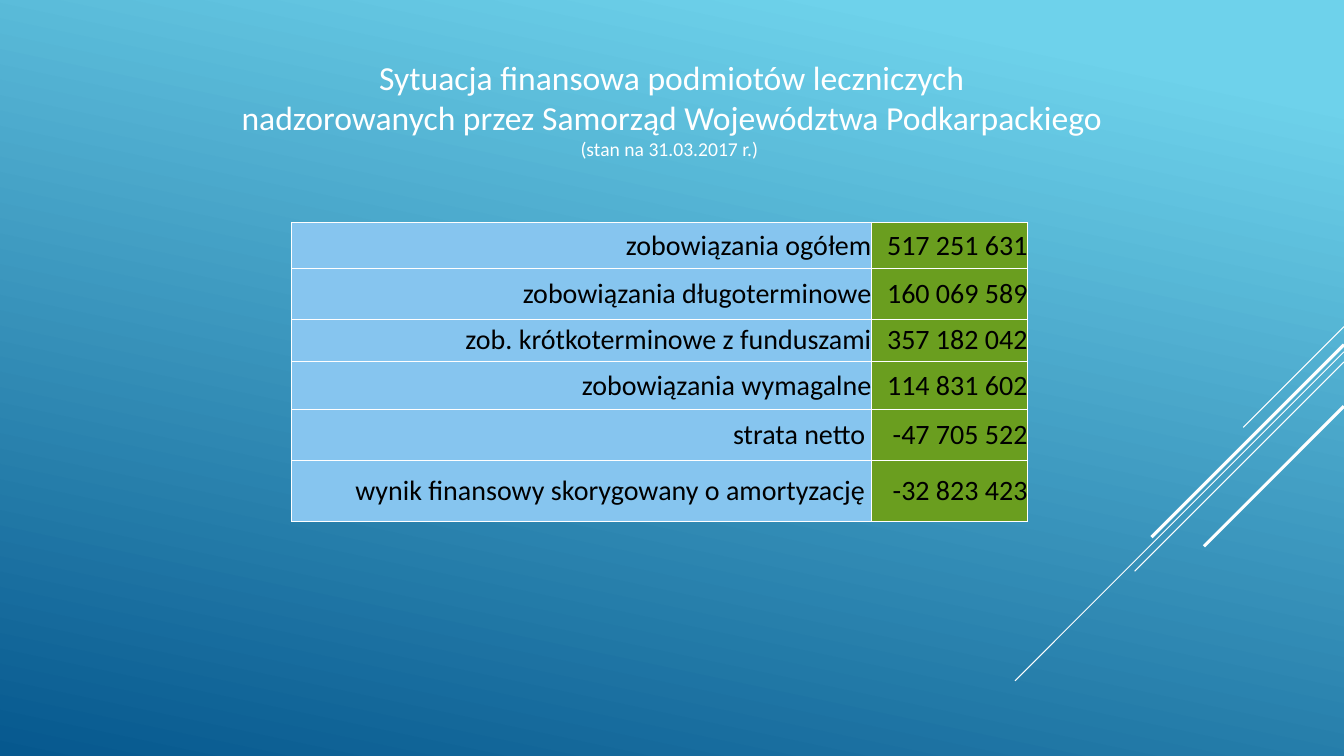
from dataclasses import dataclass

from lxml import etree
from pptx import Presentation
from pptx.dml.color import RGBColor
from pptx.enum.shapes import MSO_CONNECTOR
from pptx.enum.text import MSO_ANCHOR, MSO_AUTO_SIZE, PP_ALIGN
from pptx.oxml.ns import qn
from pptx.slide import Slide
from pptx.table import _Cell
from pptx.util import Pt

STRAIGHT = MSO_CONNECTOR.STRAIGHT
TOP, MIDDLE = MSO_ANCHOR.TOP, MSO_ANCHOR.MIDDLE
CENTER, RIGHT = PP_ALIGN.CENTER, PP_ALIGN.RIGHT
FIT = MSO_AUTO_SIZE.SHAPE_TO_FIT_TEXT

WHITE = RGBColor(0xFF, 0xFF, 0xFF)
BLACK = RGBColor(0x00, 0x00, 0x00)
AQUA = RGBColor(0x6E, 0xD2, 0xEB)
NAVY = RGBColor(0x06, 0x58, 0x8E)
SKY = RGBColor(0x86, 0xC5, 0xEF)
GREEN = RGBColor(0x6A, 0x9E, 0x1F)
FONT = "Calibri"
WIDTH, HEIGHT = 960, 540


@dataclass
class Ray:
    """A 45-degree line from the right slide edge down to the left."""
    top: float
    run: float
    weight: float


@dataclass
class Entry:
    label: str
    value: str
    height: float
    level: int = 1


RAYS = [
    Ray(233.3, 72, 0.75),
    Ray(251.3, 235, 0.75),
    Ray(258.5, 149.5, 0.75),
    Ray(246.2, 137.5, 2.25),
    Ray(290.2, 100, 2.25),
]
ENTRIES = [
    Entry("zobowiązania ogółem", "517 251 631", 32.7, 0),
    Entry("zobowiązania długoterminowe", "160 069 589", 36.5),
    Entry("zob. krótkoterminowe z funduszami", "357 182 042", 29.8),
    Entry("zobowiązania wymagalne", "114 831 602", 34.8),
    Entry("strata netto ", "-47 705 522", 36),
    Entry("wynik finansowy skorygowany o amortyzację ", "-32 823 423", 43.9),
]
COLS = [414, 111.6]
TITLE = [
    ("Sytuacja finansowa podmiotów leczniczych", 24),
    ("nadzorowanych przez Samorząd Województwa Podkarpackiego", 24),
    ("(stan na 31.03.2017 r.) ", 14),
]


def paint_back(slide: Slide) -> None:
    fill = slide.background.fill
    fill.gradient()
    fill.gradient_angle = 258
    for stop, color, place in zip(fill.gradient_stops, (AQUA, NAVY), (0.1, 1)):
        stop.color.rgb = color
        stop.position = place


def add_ray(slide: Slide, ray: Ray) -> None:
    line = slide.shapes.add_connector(
        STRAIGHT, Pt(WIDTH), Pt(ray.top),
        Pt(WIDTH - ray.run), Pt(ray.top + ray.run))
    line.line.color.rgb = WHITE
    line.line.width = Pt(ray.weight)
    etree.SubElement(line._element.spPr, qn("a:effectLst"))


def add_title(slide: Slide) -> None:
    title = slide.shapes.title
    title.left, title.top = Pt(154), Pt(36.7)
    title.width, title.height = Pt(651.6), Pt(82)
    frame = title.text_frame
    frame.text = "\n".join(text for text, _ in TITLE)
    frame.word_wrap = True
    frame.auto_size = FIT
    frame.vertical_anchor = TOP
    for par, (_, size) in zip(frame.paragraphs, TITLE):
        par.alignment = CENTER
        font = par.runs[0].font
        font.name, font.size = FONT, Pt(size)
        font.color.rgb = WHITE


def add_edges(cell: _Cell) -> None:
    """Put a thin white border on all four sides, ahead of the fill."""
    props = cell._tc.get_or_add_tcPr()
    for spot, side in enumerate(("lnL", "lnR", "lnT", "lnB")):
        edge = etree.Element(qn(f"a:{side}"), w=str(Pt(1)))
        fill = etree.SubElement(edge, qn("a:solidFill"))
        etree.SubElement(fill, qn("a:srgbClr"), val=str(WHITE))
        props.insert(spot, edge)


def fill_cell(cell: _Cell, text: str, color: RGBColor, level: int) -> None:
    cell.margin_left = cell.margin_right = Pt(0)
    cell.margin_top = cell.margin_bottom = Pt(0)
    cell.vertical_anchor = MIDDLE
    cell.fill.solid()
    cell.fill.fore_color.rgb = color
    par = cell.text_frame.paragraphs[0]
    par.text = text
    par.alignment = RIGHT
    par.level = level
    font = par.runs[0].font
    font.name, font.size, font.bold = FONT, Pt(20), False
    font.color.rgb = BLACK
    add_edges(cell)


def add_sums(slide: Slide) -> None:
    tall = sum(entry.height for entry in ENTRIES)
    table = slide.shapes.add_table(
        len(ENTRIES), len(COLS), Pt(208.5), Pt(159),
        Pt(sum(COLS)), Pt(tall)).table
    table.first_row = table.horz_banding = False
    for col, width in zip(table.columns, COLS):
        col.width = Pt(width)
    for row, entry in zip(table.rows, ENTRIES):
        row.height = Pt(entry.height)
        label, value = row.cells
        fill_cell(label, entry.label, SKY, entry.level)
        fill_cell(value, entry.value, GREEN, 0)


def main() -> None:
    deck = Presentation()
    deck.slide_width, deck.slide_height = Pt(WIDTH), Pt(HEIGHT)
    slide = deck.slides.add_slide(deck.slide_layouts.get_by_name("Title Only"))
    paint_back(slide)
    for ray in RAYS:
        add_ray(slide, ray)
    add_sums(slide)
    add_title(slide)
    deck.save("out.pptx")


if __name__ == "__main__":
    main()
